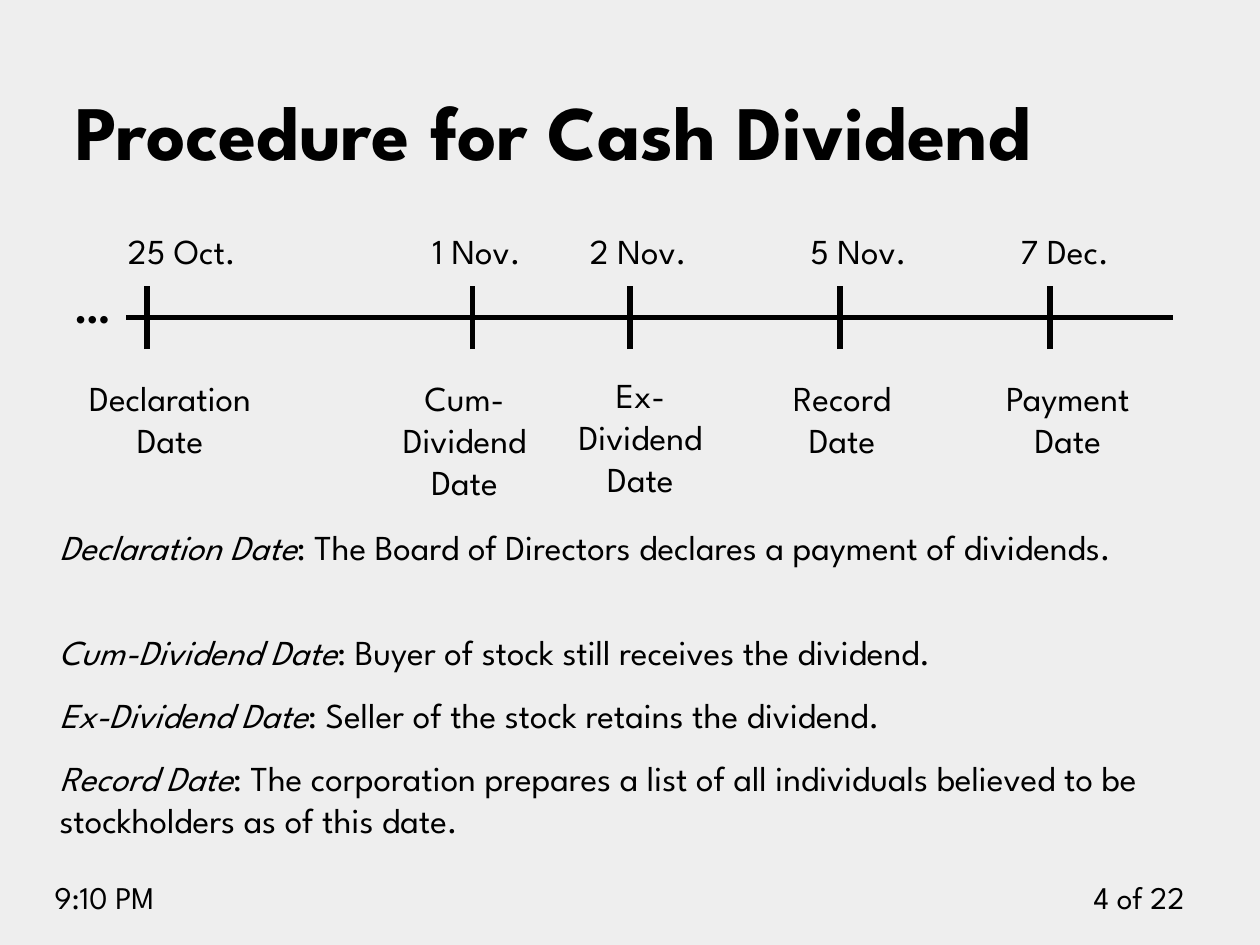
from dataclasses import dataclass

from lxml.etree import SubElement
from pptx import Presentation
from pptx.dml.color import RGBColor
from pptx.enum.shapes import MSO_CONNECTOR as Connector
from pptx.enum.text import MSO_ANCHOR as Anchor, MSO_AUTO_SIZE as AutoSize, PP_ALIGN as Align
from pptx.oxml.ns import qn
from pptx.util import Inches, Length, Pt


@dataclass(frozen=True)
class Theme:
    font: str = "League Spartan"
    ink: RGBColor = RGBColor(0x00, 0x00, 0x00)
    paper: RGBColor = RGBColor(0xEE, 0xEE, 0xEE)
    title: int = 44
    ellipsis: int = 24
    text: int = 20
    footer: int = 18
    line: int = 3


@dataclass(frozen=True)
class Box:
    """Columns and rows of the slide grid."""
    col: float
    row: float
    cols: float
    rows: float


@dataclass(frozen=True)
class Event:
    tick: float
    date: str
    date_col: float
    label: str
    label_box: Box


@dataclass(frozen=True)
class Definition:
    term: str
    meaning: str
    box: Box


THEME = Theme()
COLS, ROWS = 120, 90
AXIS_ROW, TICK_HALF = 30.25, 3
DATE_ROW, DATE_COLS, DATE_ROWS = 21.25, 14.4, 5.2

EVENTS = [
    Event(14, "25 Oct.", 11, "Declaration Date", Box(4.5, 35.25, 23.4, 9.25)),
    Event(45, "1 Nov.", 40, "Cum-Dividend Date", Box(35, 35.25, 18.5, 13.25)),
    Event(60, "2 Nov.", 55, "Ex-Dividend Date", Box(52, 35, 18, 13.25)),
    Event(80, "5 Nov.", 76, "Record Date", Box(73, 35.25, 14.4, 9.25)),
    Event(100, "7 Dec.", 96, "Payment Date", Box(93, 35.25, 17.4, 9.25)),
]
DEFINITIONS = [
    Definition("Declaration Date", "The Board of Directors declares a payment of dividends.",
               Box(4.5, 49.5, 111, 9.25)),
    Definition("Cum-Dividend Date", "Buyer of stock still receives the dividend.",
               Box(4.4, 59.5, 116, 5.25)),
    Definition("Ex-Dividend Date", "Seller of the stock retains the dividend.",
               Box(4.5, 65.5, 111, 5.25)),
    Definition("Record Date", "The corporation prepares a list of all individuals believed "
               "to be stockholders as of this date.", Box(4.5, 71.5, 111, 9.25)),
]

prs = Presentation()
prs.slide_width, prs.slide_height = Inches(10), Inches(7.5)


def x(col: float) -> Length:
    return Length(round(prs.slide_width * col / COLS))


def y(row: float) -> Length:
    return Length(round(prs.slide_height * row / ROWS))


def place(sp, box: Box) -> None:
    sp.left, sp.top, sp.width, sp.height = x(box.col), y(box.row), x(box.cols), y(box.rows)


def style(p, size: int, align: Align = Align.LEFT, bold: bool = False) -> None:
    p.alignment = align
    p.font.name, p.font.size, p.font.bold = THEME.font, Pt(size), bold
    p.font.color.rgb = THEME.ink


def add_text(s, box: Box, text: str, size: int = THEME.text, align: Align = Align.LEFT,
             bold: bool = False, term: str = "") -> None:
    """Add a text box, with an optional italic term before the text."""
    sp = s.shapes.add_textbox(0, 0, 0, 0)
    place(sp, box)
    tf = sp.text_frame
    tf.word_wrap = True
    p = tf.paragraphs[0]
    style(p, size, align, bold)
    if term:
        r = p.add_run()
        r.text, r.font.italic = term, True
    p.add_run().text = text


def add_line(s, col1: float, row1: float, col2: float, row2: float) -> None:
    line = s.shapes.add_connector(Connector.STRAIGHT, x(col1), y(row1), x(col2), y(row2))
    line.line.color.rgb, line.line.width = THEME.ink, Pt(THEME.line)
    SubElement(line._element.spPr, qn("a:effectLst"))


def add_title(s, text: str, box: Box) -> None:
    sp = s.shapes.title
    place(sp, box)
    tf = sp.text_frame
    tf.text = text
    tf.word_wrap, tf.auto_size, tf.vertical_anchor = True, AutoSize.NONE, Anchor.BOTTOM
    p = tf.paragraphs[0]
    style(p, THEME.title, Align.JUSTIFY, bold=True)
    p.line_spacing, p.space_after = 0.85, Pt(6)


def main() -> None:
    s = prs.slides.add_slide(prs.slide_layouts[5])
    s.background.fill.solid()
    s.background.fill.fore_color.rgb = THEME.paper

    # Footer and title
    add_text(s, Box(100, 83, 14, 4.8), "4 of 22", THEME.footer, Align.RIGHT)
    add_text(s, Box(4, 83, 19, 4.8), "9:10 PM", THEME.footer)
    add_title(s, "Procedure for Cash Dividend", Box(6, 2.4, 111, 15))

    # Timeline
    add_line(s, 12, AXIS_ROW, 111.7, AXIS_ROW)
    add_text(s, Box(6, 26.25, 6.1, 6), "…", THEME.ellipsis, bold=True)
    for e in EVENTS:
        add_text(s, Box(e.date_col, DATE_ROW, DATE_COLS, DATE_ROWS), e.date)
        add_line(s, e.tick, AXIS_ROW + TICK_HALF, e.tick, AXIS_ROW - TICK_HALF)
        add_text(s, e.label_box, e.label, align=Align.CENTER)

    # Definitions
    for d in DEFINITIONS:
        add_text(s, d.box, f": {d.meaning}", term=d.term)

    prs.save("out.pptx")


if __name__ == "__main__":
    main()
